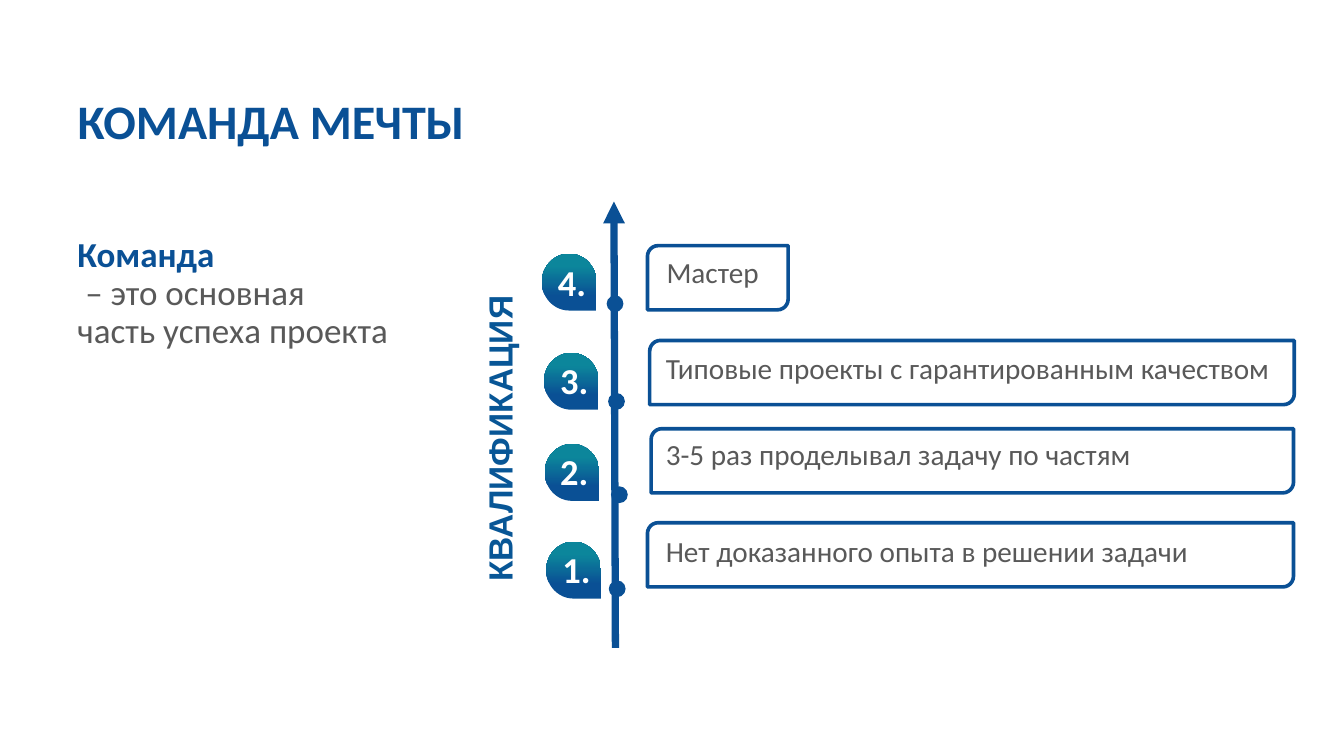
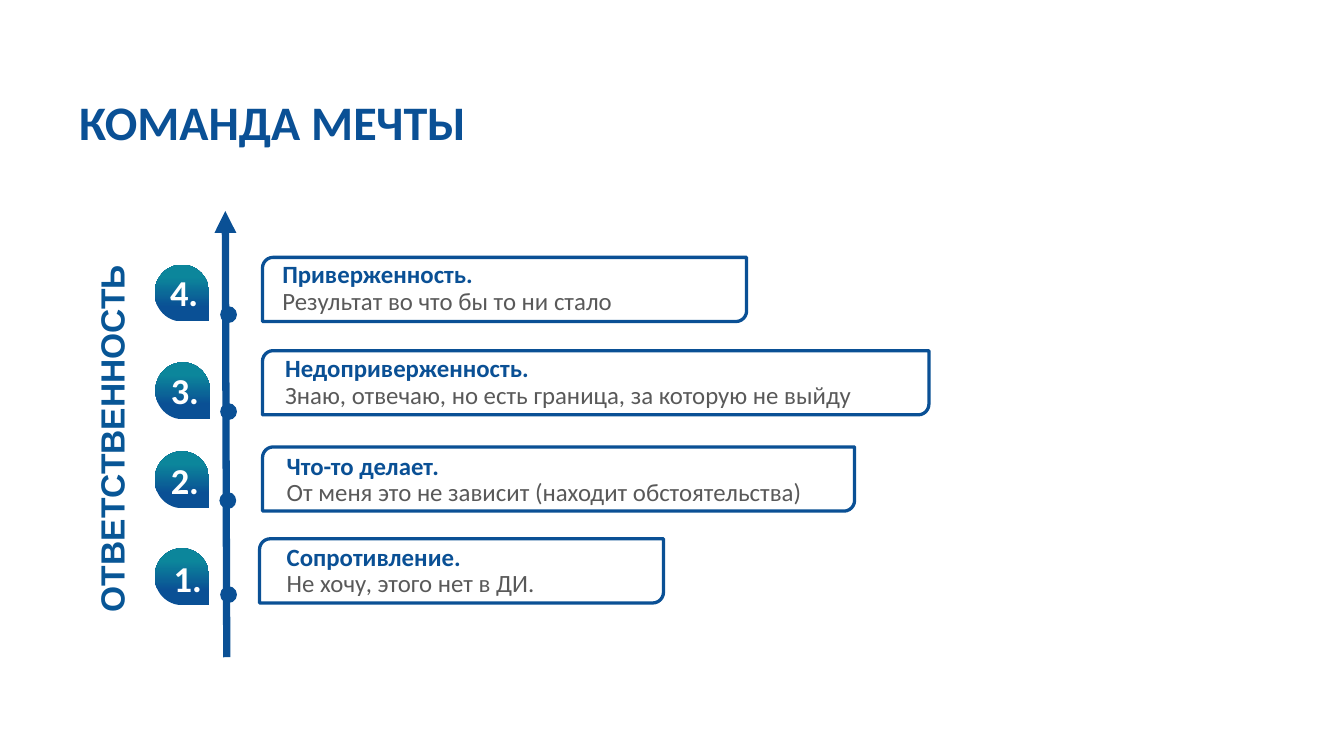
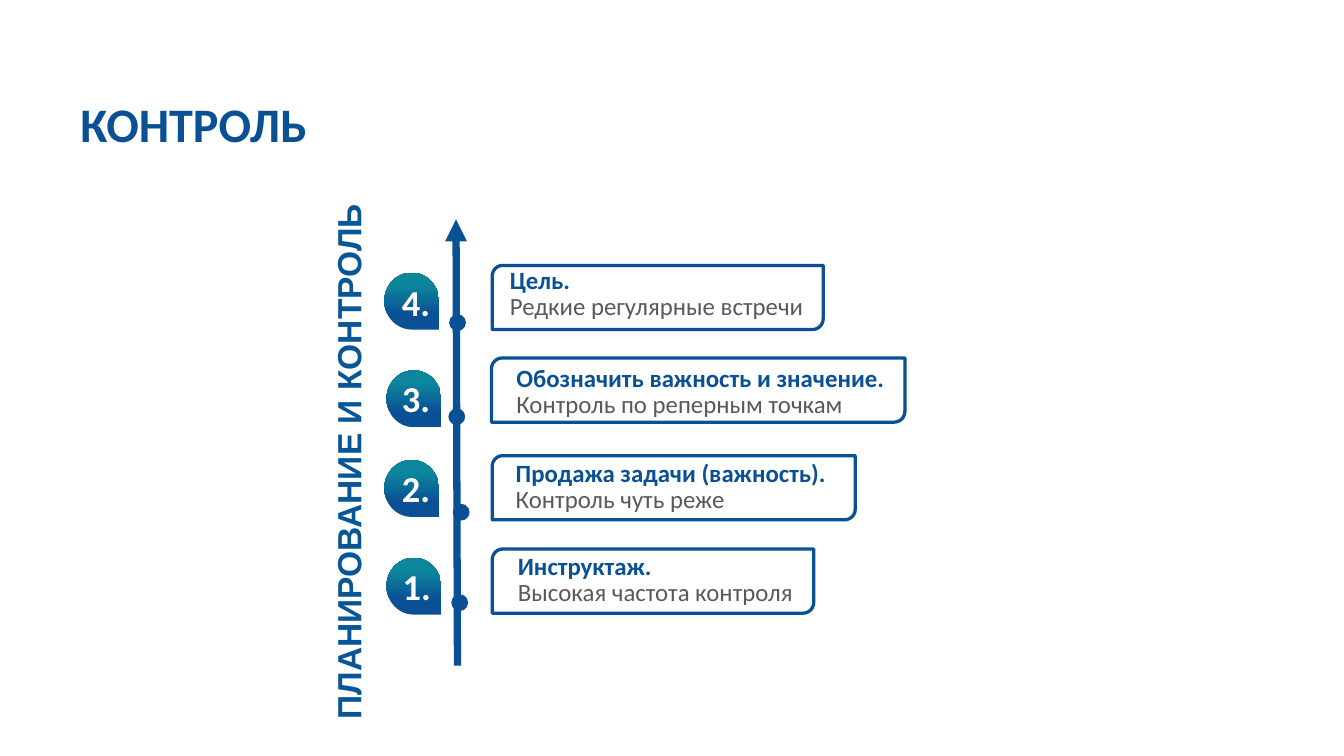
import pptx
import pptx.util
import pptx.dml.color
import pptx.enum.dml
import pptx.enum.shapes
import pptx.enum.text
import pptx.oxml
import pptx.oxml.ns

Pt = pptx.util.Pt
SHAPES = pptx.enum.shapes.MSO_SHAPE
ALIGN = pptx.enum.text.PP_ALIGN
COLORS = {"blue": "0A5095", "label": "085696", "teal": "0C869B", "grey": "595959", "white": "FFFFFF"}
RGB = {name: pptx.dml.color.RGBColor.from_string(value) for name, value in COLORS.items()}

DROP_W, DROP_H = 37.5, 39
NUMBER_H = 28.5
DOT = 11.5
BOX_H = 44
AXIS_H = 306
LABEL_H = 35.5

scales = [
    {
        "title": ("КОМАНДА МЕЧТЫ", 46, 65.5, 368.5),
        "axis": (422, 138.2),
        "label": ("КВАЛИФИКАЦИЯ", 227.5, 283, 230.5),
        "outline": 2.5,
        "levels": [
            ((371.5, 174), (373.5, 184.5), (416, 202.5), (444, 168.5, 96.5), (450, 175, 102),
             ["Мастер"]),
            ((373, 242), (375, 252), (417, 269.5), (445.5, 233.5, 442), (449.5, 240.5, 438),
             ["Типовые проекты с гарантированным качеством"]),
            ((373.5, 304.5), (375, 314.5), (419, 333.5), (446.5, 294, 440.5), (449.5, 300, 368.5),
             ["3-5 раз проделывал задачу по частям"]),
            ((374.5, 371.5), (376.5, 381.5), (417.5, 398), (444, 358.5, 443), (449.5, 366.5, 431.5),
             ["Нет доказанного опыта в решении задачи"]),
        ],
    },
    {
        "title": ("КОМАНДА МЕЧТЫ", 47, 66.5, 368.5),
        "axis": (155.5, 144.7),
        "label": ("ОТВЕТСТВЕННОСТЬ", -64, 283, 281.5),
        "outline": 2.25,
        "levels": [
            ((106, 181.5), (107.5, 191.5), (151, 210), (180, 176.5, 332), (186.5, 176.5, 274.5),
             ["Приверженность.", "Результат во что бы то ни стало"]),
            ((106.5, 248.5), (108, 258.5), (151, 276.5), (180, 240.5, 457), (188.5, 241, 471),
             ["Недоприверженность.", "Знаю, отвечаю, но есть граница, за которую не выйду"]),
            ((106, 309.5), (108, 320.5), (150.5, 337.5), (180, 306.5, 406), (189.5, 308, 422),
             ["Что-то делает.", "От меня это не зависит (находит обстоятельства)"]),
            ((106, 376), (110, 388), (151, 402), (178, 369.5, 277), (189.5, 370, 245.5),
             ["Сопротивление.", "Не хочу, этого нет в ДИ."]),
        ],
    },
    {
        "title": ("КОНТРОЛЬ", 48, 67.5, 187),
        "axis": (313.7, 150.5),
        "label": ("ПЛАНИРОВАНИЕ И КОНТРОЛЬ", 49, 299, 380),
        "outline": 2.25,
        "levels": [
            ((263.5, 187), (266.5, 198.5), (308, 215.5), (337.5, 182, 227), (342.5, 180.5, 243.5),
             ["Цель.", "Редкие регулярные встречи"]),
            ((265, 254), (266.5, 264), (307.5, 280), (337, 245.5, 283.5), (347, 247.5, 404),
             ["Обозначить важность и значение.", "Контроль по реперным точкам"]),
            ((263.5, 315.5), (266.5, 326), (310.5, 345.5), (337.5, 312.5, 249), (346.5, 312.5, 239),
             ["Продажа задачи (важность).", "Контроль чуть реже"]),
            ((265, 382.5), (267, 393), (309.5, 407.5), (337.5, 376.5, 220.5), (348, 376.5, 209.5),
             ["Инструктаж.", "Высокая частота контроля"]),
        ],
    },
]


def write(holder, lines, size, spacing=None, align=ALIGN.LEFT, font="Calibri"):
    frame = holder.text_frame
    frame.word_wrap = True
    frame.auto_size = pptx.enum.text.MSO_AUTO_SIZE.NONE
    frame.vertical_anchor = pptx.enum.text.MSO_ANCHOR.TOP
    for index, (text, color, bold) in enumerate(lines):
        paragraph = frame.add_paragraph() if index else frame.paragraphs[0]
        paragraph.alignment = align
        if spacing:
            paragraph.line_spacing = Pt(spacing)
        run = paragraph.add_run()
        run.text = text
        run.font.name = font
        run.font.size = Pt(size)
        run.font.bold = bold
        run.font.color.rgb = RGB[color]


def add_plain(slide, kind, left, top, width, height):
    shape = slide.shapes.add_shape(kind, Pt(left), Pt(top), Pt(width), Pt(height))
    shape.shadow.inherit = False
    shape.line.fill.background()
    return shape


deck = pptx.Presentation()
deck.slide_width = Pt(921.6)
deck.slide_height = Pt(518.4)

for scale in scales:
    slide = deck.slides.add_slide(deck.slide_layouts[5])

    heading, left, top, width = scale["title"]
    title = slide.shapes.title
    title.left, title.top, title.width, title.height = Pt(left), Pt(top), Pt(width), Pt(41)
    write(title, [(heading, "blue", True)], 33, 33)

    foot_x, tip_y = scale["axis"]
    axis = slide.shapes.add_connector(
        pptx.enum.shapes.MSO_CONNECTOR.STRAIGHT,
        Pt(foot_x), Pt(tip_y + AXIS_H), Pt(foot_x - 1), Pt(tip_y))
    axis.line.width = Pt(5)
    axis.line.color.rgb = RGB["blue"]
    arrowhead = pptx.oxml.parse_xml(
        '<a:tailEnd %s type="triangle"/>' % pptx.oxml.ns.nsdecls("a"))
    axis.line._get_or_add_ln().append(arrowhead)
    axis._element.spPr.append(
        pptx.oxml.parse_xml("<a:effectLst %s/>" % pptx.oxml.ns.nsdecls("a")))

    caption, left, top, width = scale["label"]
    label = slide.shapes.add_textbox(Pt(left), Pt(top), Pt(width), Pt(LABEL_H))
    label.rotation = 270
    write(label, [(caption, "label", True)], 23, align=ALIGN.CENTER, font="Arial")

    for level, (drop_at, number_at, dot_at, box_at, text_at, lines) in zip((4, 3, 2, 1), scale["levels"]):
        drop = add_plain(slide, SHAPES.TEAR, *drop_at, DROP_W, DROP_H)
        drop._element.spPr.xfrm.set("flipV", "1")
        drop.fill.gradient()
        drop.fill.gradient_angle = 270
        for stop, color, position in zip(drop.fill.gradient_stops, ("blue", "teal"), (0.26, 0.78)):
            stop.color.rgb = RGB[color]
            stop.position = position

        number = slide.shapes.add_textbox(*map(Pt, number_at), Pt(DROP_W), Pt(NUMBER_H))
        write(number, [(f"{level}.", "white", True)], 25, 20, ALIGN.CENTER)

        dot = add_plain(slide, SHAPES.OVAL, *dot_at, DOT, DOT)
        dot.fill.solid()
        dot.fill.fore_color.rgb = RGB["blue"]

        box = add_plain(slide, SHAPES.ROUND_2_DIAG_RECTANGLE, *box_at, BOX_H)
        box.fill.background()
        box.line.color.rgb = RGB["blue"]
        box.line.width = Pt(scale["outline"])

        *names, meaning = lines
        size, spacing, height = (17, 18, BOX_H) if names else (20, 20, 28)
        description = slide.shapes.add_textbox(*map(Pt, text_at), Pt(height))
        write(description, [(name, "blue", True) for name in names] + [(meaning, "grey", False)],
              size, spacing)

definition = deck.slides[0].shapes.add_textbox(Pt(46), Pt(158.5), Pt(245), Pt(85.5))
write(definition, [
    ("Команда", "blue", True),
    (" – это основная", "grey", False),
    ("часть успеха проекта", "grey", False),
], 24, 26)

deck.save("out.pptx")
